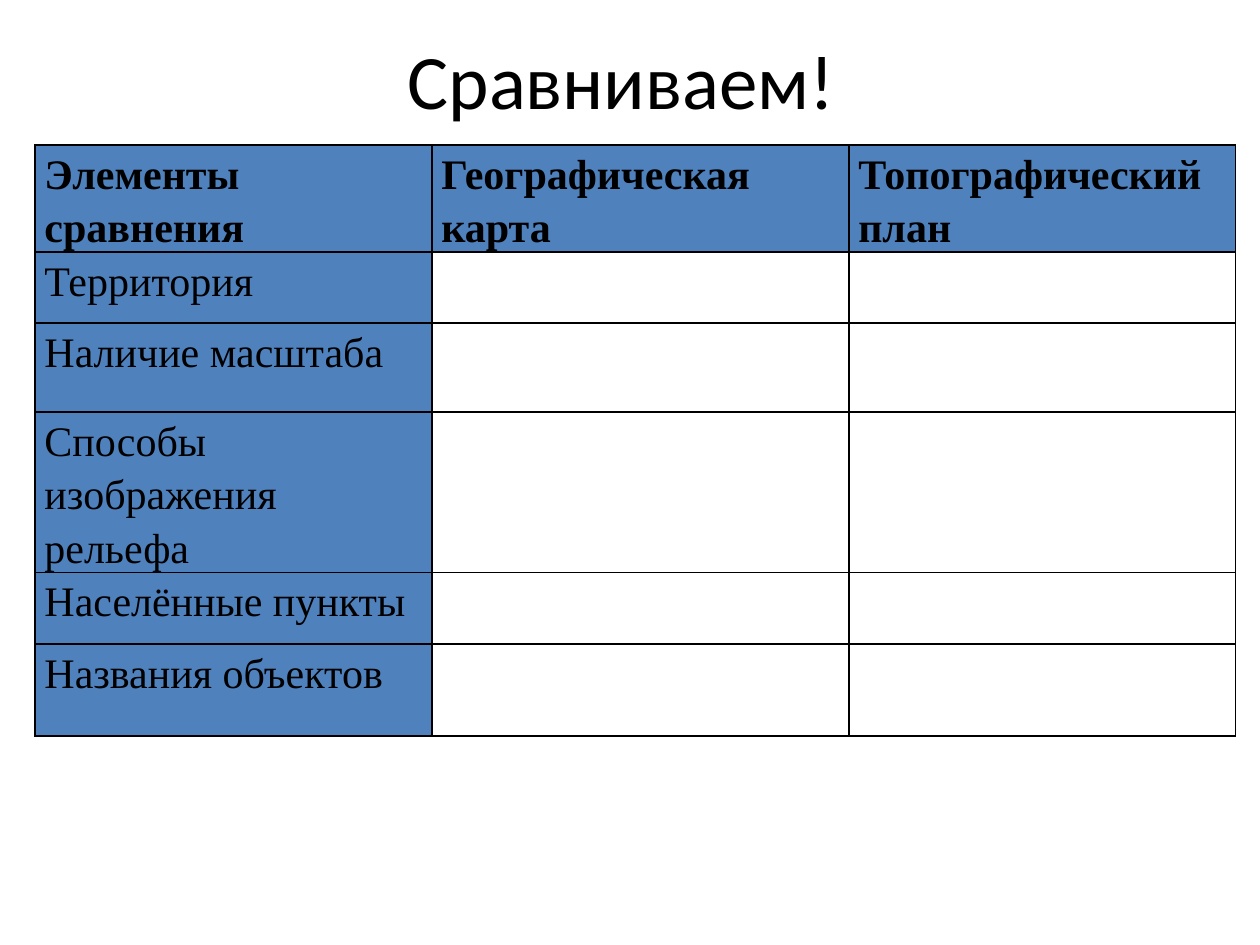
from typing import NamedTuple

from lxml.etree import SubElement
from pptx import Presentation
from pptx.dml.color import RGBColor
from pptx.enum.text import MSO_ANCHOR as Anchor, PP_ALIGN as Align
from pptx.oxml.ns import qn
from pptx.util import Pt

BLUE, WHITE, BLACK = "4F81BD", "FFFFFF", "000000"


class Row(NamedTuple):
    height: float
    texts: tuple
    bold: bool = False


COLS = (226.8, 238.3, 221)
ROWS = (
    Row(61.2, ("Элементы сравнения", "Географическая карта",
               "Топографический план"), True),
    Row(40.5, ("Территория", "", "")),
    Row(51.1, ("Наличие масштаба", "", "")),
    Row(91.4, ("Способы изображения рельефа", "", "")),
    Row(41, ("Населённые пункты", "", "")),
    Row(52.6, ("Названия объектов", "", "")),
)


def color(code: str) -> RGBColor:
    return RGBColor.from_string(code)


def style(para, face: str, size: float, bold: bool, align: Align) -> None:
    para.alignment = align
    font = para.font
    font.name, font.size, font.bold = face, Pt(size), bold
    font.color.rgb = color(BLACK)


def border(cell) -> None:
    """Put a thin black line on each side of the cell."""
    props = cell._tc.get_or_add_tcPr()
    for spot, side in enumerate(("lnL", "lnR", "lnT", "lnB")):
        line = SubElement(props, qn(f"a:{side}"), w=str(Pt(1)))
        fill = SubElement(line, qn("a:solidFill"))
        SubElement(fill, qn("a:srgbClr"), val=BLACK)
        props.insert(spot, line)


def fill_cell(cell, text: str, bold: bool) -> None:
    cell.fill.solid()
    cell.fill.fore_color.rgb = color(BLUE if text else WHITE)
    border(cell)
    if text:
        cell.margin_left = cell.margin_right = Pt(5.4)
        cell.margin_top = cell.margin_bottom = Pt(0)
        cell.text = text
        para = cell.text_frame.paragraphs[0]
        para.line_spacing = 1.15
        style(para, "Times New Roman", 24, bold, Align.JUSTIFY)


def add_grid(slide) -> None:
    shape = slide.shapes.add_table(
        len(ROWS), len(COLS), Pt(20), Pt(82.8),
        Pt(sum(COLS)), Pt(sum(row.height for row in ROWS)))
    table = shape.table
    table.first_row = table.horz_banding = False
    for col, width in zip(table.columns, COLS):
        col.width = Pt(width)
    for line, row in zip(table.rows, ROWS):
        line.height = Pt(row.height)
        for cell, text in zip(line.cells, row.texts):
            fill_cell(cell, text, row.bold)


def add_title(slide, text: str) -> None:
    title = slide.shapes.title
    title.left, title.top = Pt(31), Pt(0)
    title.width, title.height = Pt(648), Pt(90)
    frame = title.text_frame
    frame.text = text
    frame.vertical_anchor = Anchor.MIDDLE
    style(frame.paragraphs[0], "Calibri", 44, False, Align.CENTER)


def main() -> None:
    deck = Presentation()
    deck.slide_width, deck.slide_height = Pt(720), Pt(540)
    slide = deck.slides.add_slide(deck.slide_layouts[5])
    add_title(slide, "Сравниваем!")
    add_grid(slide)
    deck.save("out.pptx")


if __name__ == "__main__":
    main()
